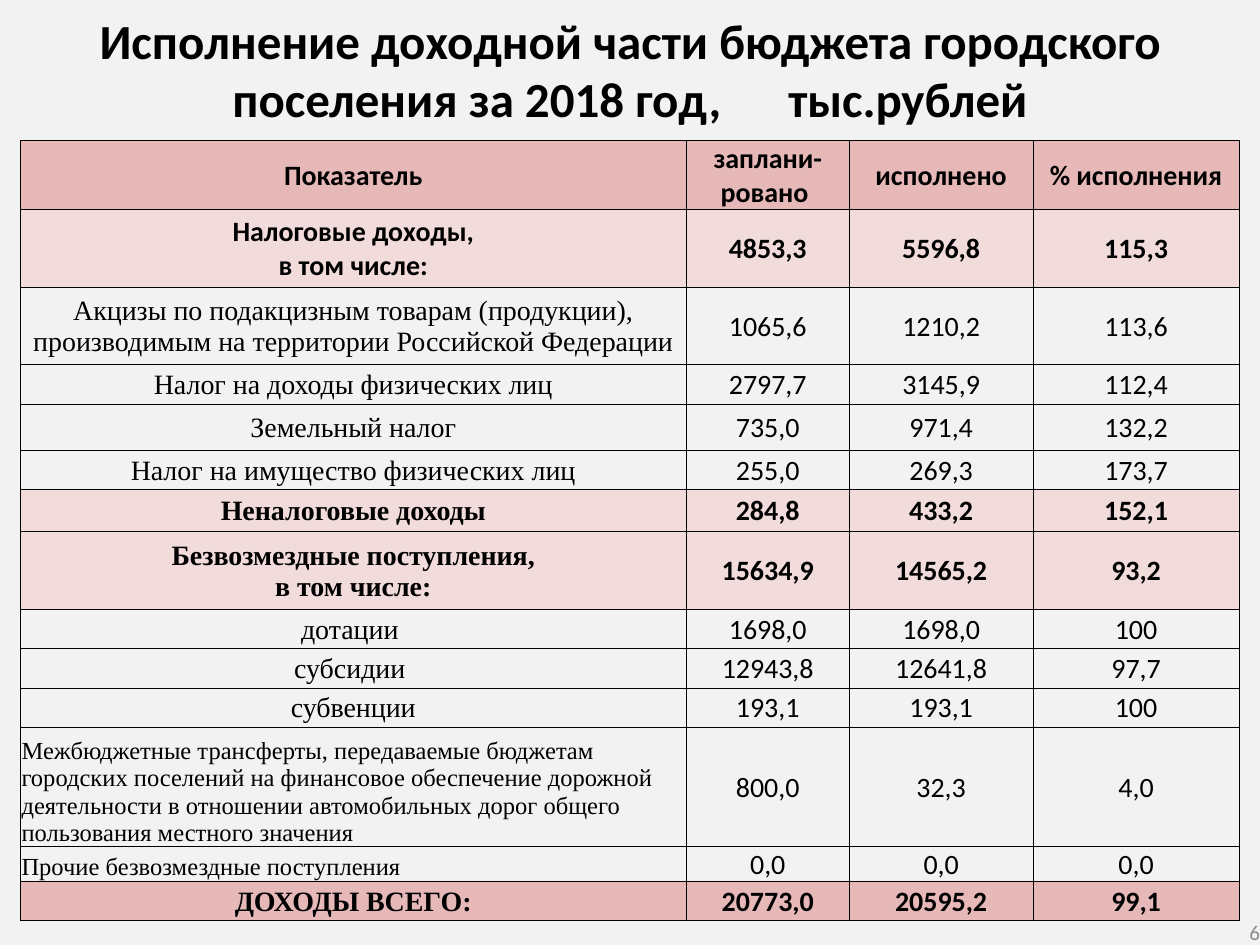
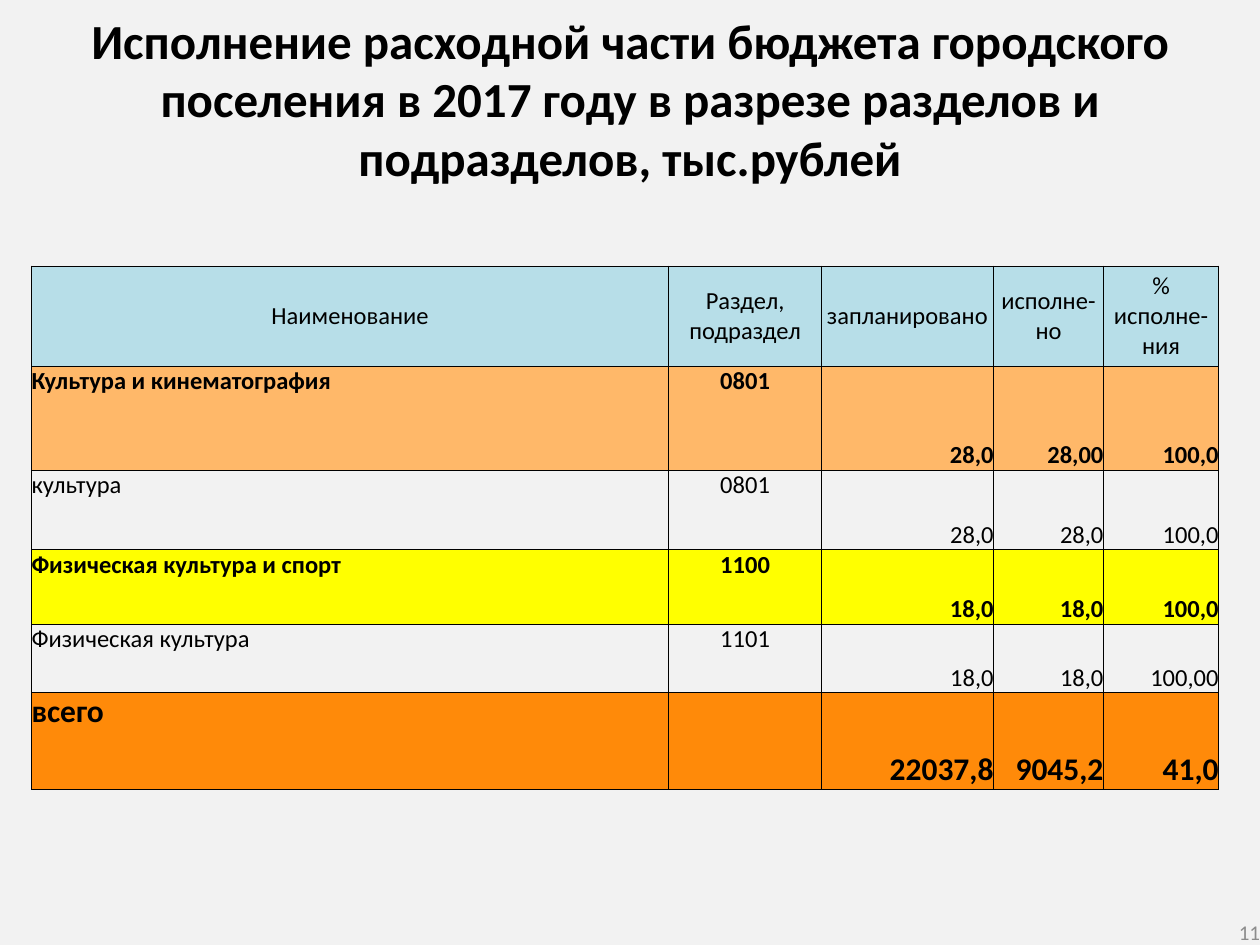
"""Build two budget slides, each with a title, a table and a page number."""
from copy import deepcopy
from dataclasses import dataclass
from typing import Optional

from lxml.etree import SubElement
from pptx import Presentation
from pptx.dml.color import RGBColor
from pptx.enum.text import MSO_ANCHOR, PP_ALIGN
from pptx.oxml.ns import qn
from pptx.util import Pt


@dataclass(frozen=True)
class Theme:
    """Colours, fonts and type sizes."""
    page: str = "F2F2F2"
    ink: str = "000000"
    grey: str = "8C8C8C"
    rose: str = "E6B9B8"
    blush: str = "F2DCDB"
    sky: str = "B7DEE8"
    peach: str = "FFB869"
    yellow: str = "FFFF00"
    orange: str = "FF8A09"
    sans: str = "Calibri"
    serif: str = "Times New Roman"
    title: float = 28
    total: float = 18
    body: float = 16
    small: float = 14
    foot: float = 12
    rule: float = 0.5
    gap: float = 32


@dataclass(frozen=True)
class Spot:
    """Place of text within its cell."""
    align: PP_ALIGN
    anchor: MSO_ANCHOR


@dataclass(frozen=True)
class Row:
    """One table row; the label may differ from the values."""
    height: float
    cells: tuple[str, ...]
    spots: tuple[Spot, ...]
    fill: Optional[str] = None
    bold: bool = False
    size: float = Theme.body
    face: str = Theme.sans
    label: Optional[float] = None


@dataclass(frozen=True)
class Grid:
    """A table with its place, column widths and cell margin."""
    left: float
    top: float
    cols: tuple[float, ...]
    rows: tuple[Row, ...]
    inset: float = 0


@dataclass(frozen=True)
class Page:
    """The content of one slide."""
    title: str
    deep: float
    number: str
    grid: Grid


THEME = Theme()
MID = Spot(PP_ALIGN.CENTER, MSO_ANCHOR.MIDDLE)
LOW = Spot(PP_ALIGN.LEFT, MSO_ANCHOR.BOTTOM)
LEFT = Spot(PP_ALIGN.LEFT, MSO_ANCHOR.TOP)
HIGH = Spot(PP_ALIGN.CENTER, MSO_ANCHOR.TOP)
RIGHT = Spot(PP_ALIGN.RIGHT, MSO_ANCHOR.BOTTOM)
EVEN = (MID,) * 5
NOTE = (LOW, MID, MID, MID)
MIXED = (LEFT, HIGH, RIGHT, RIGHT, RIGHT)


def write(frame, text: str, *, size: float, align: PP_ALIGN, bold: bool = False,
          color: str = THEME.ink, face: str = THEME.sans) -> None:
    """Write text; a newline breaks the line and a tab makes a wide space."""
    para = frame.paragraphs[0]
    para.alignment = align
    for spot, line in enumerate(text.split("\n")):
        if spot:
            para.add_line_break()
        head, tab, tail = line.partition("\t")
        for part in (head, " ", tail) if tab else (head,):
            run = para.add_run()
            run.text = part
            font = run.font
            font.name, font.size, font.bold = face, Pt(size), bold
            font.color.rgb = RGBColor.from_string(color)
            if part == " ":
                run._r.get_or_add_rPr().set("spc", str(round(THEME.gap * 100)))
    for mark in para._p.findall(qn("a:br")):
        mark.insert(0, deepcopy(para.runs[0]._r.rPr))


def add_box(slide, left: float, top: float, width: float, height: float,
            inset: tuple[float, ...], anchor: MSO_ANCHOR):
    """Add a wrapped text box and return its frame."""
    box = slide.shapes.add_textbox(Pt(left), Pt(top), Pt(width), Pt(height))
    frame = box.text_frame
    frame.word_wrap = True
    frame.vertical_anchor = anchor
    (frame.margin_left, frame.margin_top,
     frame.margin_right, frame.margin_bottom) = map(Pt, inset)
    return frame


def rule(cell) -> None:
    """Draw thin lines on all four sides of a cell."""
    props = cell._tc.get_or_add_tcPr()
    for place, side in enumerate(("lnL", "lnR", "lnT", "lnB")):
        line = SubElement(props, qn(f"a:{side}"), w=str(int(Pt(THEME.rule))))
        fill = SubElement(line, qn("a:solidFill"))
        SubElement(fill, qn("a:srgbClr"), val=THEME.ink)
        props.insert(place, line)


def fill_cell(cell, row: Row, col: int, inset: float) -> None:
    """Set the fill, lines, margins and text of one cell."""
    spot, text = row.spots[col], row.cells[col]
    cell.margin_left = cell.margin_top = cell.margin_right = Pt(inset)
    cell.margin_bottom = 0
    cell.vertical_anchor = spot.anchor
    if row.fill:
        cell.fill.solid()
        cell.fill.fore_color.rgb = RGBColor.from_string(row.fill)
    else:
        cell.fill.background()
    rule(cell)
    if text:
        write(cell.text_frame, text, align=spot.align, bold=row.bold,
              size=row.label if row.label and col == 0 else row.size,
              face=row.face if col == 0 else THEME.sans)


def add_grid(slide, grid: Grid) -> None:
    """Add a table to the slide."""
    high = sum(row.height for row in grid.rows)
    table = slide.shapes.add_table(
        len(grid.rows), len(grid.cols), Pt(grid.left), Pt(grid.top),
        Pt(sum(grid.cols)), Pt(high)).table
    table.first_row = table.horz_banding = False
    for col, width in enumerate(grid.cols):
        table.columns[col].width = Pt(width)
    for index, row in enumerate(grid.rows):
        table.rows[index].height = Pt(row.height)
        for col in range(len(grid.cols)):
            fill_cell(table.cell(index, col), row, col, grid.inset)


def add_page(deck, page: Page) -> None:
    """Add one slide with title, table and page number."""
    slide = deck.slides.add_slide(deck.slide_layouts[6])
    back = slide.background.fill
    back.solid()
    back.fore_color.rgb = RGBColor.from_string(THEME.page)
    head = add_box(slide, 0, 0, 720, page.deep, (7.2, 5.76, 7.2, 3.6), MSO_ANCHOR.TOP)
    write(head, page.title, size=THEME.title, align=PP_ALIGN.CENTER, bold=True)
    add_grid(slide, page.grid)
    foot = add_box(slide, 552, 525, 168, 15, (0, 0, 0, 0), MSO_ANCHOR.MIDDLE)
    write(foot, page.number, size=THEME.foot, align=PP_ALIGN.RIGHT, color=THEME.grey)


def item(height: float, *cells: str, **style) -> Row:
    """Make an income row with a serif label."""
    return Row(height, cells, **{"spots": EVEN, "face": THEME.serif, **style})


def part(height: float, *cells: str, **style) -> Row:
    """Make a spending row in small type."""
    return Row(height, cells, **{"spots": MIXED, "size": THEME.small, **style})


HEAD = {"fill": THEME.rose, "bold": True}
GROUP = {"fill": THEME.blush, "bold": True}
ASIDE = {"spots": NOTE, "label": THEME.small}

INCOME = Grid(11.6, 80.2, (380.6, 93.1, 105.1, 117.7), (
    item(39.5, "Показатель", "заплани-\nровано ", "исполнено", "% исполнения",
         **HEAD | {"face": THEME.sans}),
    item(44.5, "Налоговые доходы,\nв том числе:", "4853,3", "5596,8", "115,3",
         **GROUP | {"face": THEME.sans}),
    item(44.2, "Акцизы по подакцизным товарам (продукции), производимым "
         "на территории Российской Федерации", "1065,6", "1210,2", "113,6"),
    item(22.5, "Налог на доходы физических лиц", "2797,7", "3145,9", "112,4"),
    item(26.5, "Земельный налог", "735,0", "971,4", "132,2"),
    item(22.5, "Налог на имущество физических лиц", "255,0", "269,3", "173,7"),
    item(24, "Неналоговые доходы", "284,8", "433,2", "152,1", **GROUP),
    item(44.5, "Безвозмездные поступления,\nв том числе:",
         "15634,9", "14565,2", "93,2", **GROUP),
    item(22.5, "дотации ", "1698,0", "1698,0", "100"),
    item(22.5, "субсидии ", "12943,8", "12641,8", "97,7"),
    item(22.5, "субвенции", "193,1", "193,1", "100"),
    item(68, "Межбюджетные трансферты, передаваемые бюджетам городских поселений "
         "на финансовое обеспечение дорожной деятельности в отношении "
         "автомобильных дорог общего пользования местного значения",
         "800,0", "32,3", "4,0", **ASIDE),
    item(19.5, "Прочие безвозмездные поступления", "0,0", "0,0", "0,0", **ASIDE),
    item(22.5, "ДОХОДЫ ВСЕГО:", "20773,0", "20595,2", "99,1", **HEAD),
), inset=0.72)

SPEND = Grid(18, 152, (364.2, 87.2, 98.4, 62.8, 65.8), (
    part(57.2, "Наименование", "Раздел, подраздел", "запланировано",
         "исполне-\nно", "% исполне-ния", spots=EVEN, fill=THEME.sky),
    part(59.5, "Культура и кинематография", "0801", "28,0", "28,00", "100,0",
         fill=THEME.peach, bold=True),
    part(45.5, "культура", "0801", "28,0", "28,0", "100,0"),
    part(42.5, "Физическая культура и спорт", "1100", "18,0", "18,0", "100,0",
         fill=THEME.yellow, bold=True),
    part(39.2, "Физическая культура", "1101", "18,0", "18,0", "100,00"),
    part(55.2, "всего", "", "22037,8", "9045,2", "41,0",
         fill=THEME.orange, bold=True, size=THEME.total),
))

PAGES = (
    Page("Исполнение доходной части бюджета городского поселения "
         "за 2018 год,\tтыс.рублей", 77, "6", INCOME),
    Page("Исполнение расходной части бюджета городского поселения в 2017 году "
         "в разрезе разделов и подразделов, тыс.рублей", 111, "11", SPEND),
)


def main() -> None:
    """Build and save the deck."""
    deck = Presentation()
    deck.slide_width, deck.slide_height = Pt(720), Pt(540)
    for page in PAGES:
        add_page(deck, page)
    deck.save("out.pptx")


if __name__ == "__main__":
    main()
